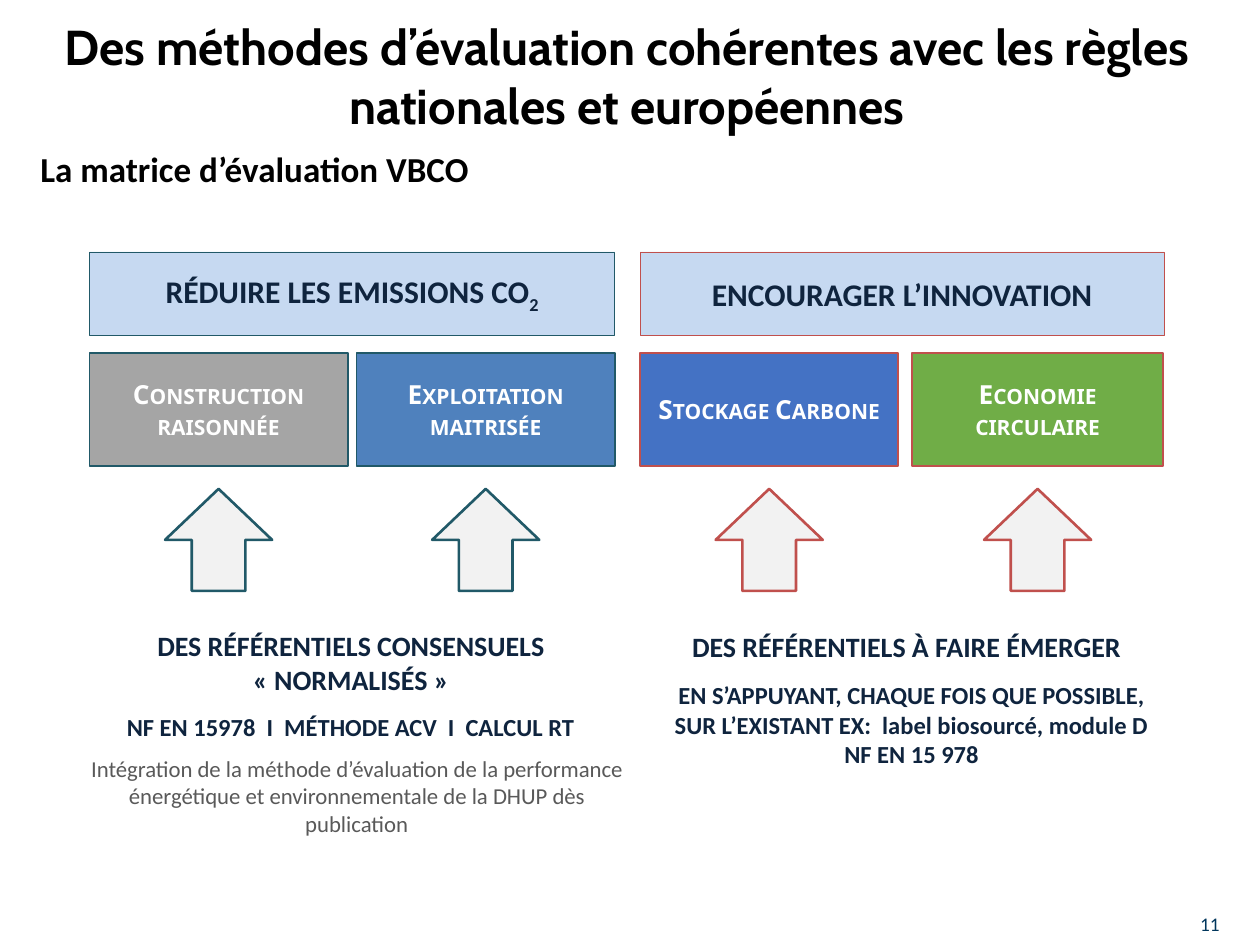
import pptx
import pptx.util
from pptx.dml.color import RGBColor
from pptx.enum.shapes import MSO_SHAPE
from pptx.enum.text import MSO_ANCHOR, PP_ALIGN

W, H = 10, 7.5
BLACK = RGBColor(0x00, 0x00, 0x00)
WHITE = RGBColor(0xFF, 0xFF, 0xFF)
NAVY = RGBColor(0x0F, 0x24, 0x3E)
PAGE_BLUE = RGBColor(0x00, 0x36, 0x5C)
GREY_TEXT = RGBColor(0x59, 0x59, 0x59)
PALE_BLUE = RGBColor(0xC6, 0xD9, 0xF1)
PALE_GREY = RGBColor(0xF2, 0xF2, 0xF2)
TEAL = RGBColor(0x21, 0x59, 0x68)
RED = RGBColor(0xC0, 0x50, 0x4D)
GREY = RGBColor(0xA5, 0xA5, 0xA5)
BLUE = RGBColor(0x4F, 0x81, 0xBD)
ROYAL = RGBColor(0x44, 0x72, 0xC4)
GREEN = RGBColor(0x70, 0xAD, 0x47)

PADDED = (0.13, 0.07, 0.13, 0.07)
HEADING = (0, 0, 0.04, 0)
FLUSH = (0, 0, 0, 0)

# Rows of the matrix: top, height
BANNER_ROW = (2, 0.66)
CARD_ROW = (2.8, 0.9)
ARROW_ROW = (3.88, 0.81)
ARROW_W = 0.85

# Banner: left, width, line colour, runs, then its cards (left, width, fill, text)
PILLARS = [
    (0.71, 4.17, TEAL, [("RÉDUIRE LES EMISSIONS CO", {}), ("2", {"baseline": "-25000"})],
     [(0.71, 2.05, GREY, "Construction raisonnée"),
      (2.83, 2.05, BLUE, "Exploitation maitrisée")]),
    (5.08, 4.16, RED, [("ENCOURAGER L’INNOVATION", {})],
     [(5.08, 2.05, ROYAL, "Stockage Carbone"),
      (7.24, 1.99, GREEN, "Economie circulaire")]),
]


def box(left, top, width, height):
    return [pptx.util.Inches(v) for v in (left, top, width, height)]


def write(sp, paragraphs, size, color, font="Calibri", bold=True,
          align=PP_ALIGN.CENTER, ins=PADDED, anchor=MSO_ANCHOR.TOP, wrap=True):
    """Fill a shape with paragraphs, each a list of (text, run attributes)."""
    tf = sp.text_frame
    tf.word_wrap = wrap
    tf.vertical_anchor = anchor
    tf.margin_left, tf.margin_top, tf.margin_right, tf.margin_bottom = box(*ins)
    for i, runs in enumerate(paragraphs):
        p = tf.add_paragraph() if i else tf.paragraphs[0]
        p.alignment = align
        for text, attributes in runs:
            r = p.add_run()
            r.text = text
            r.font.name, r.font.size, r.font.bold = font, pptx.util.Pt(size), bold
            r.font.color.rgb = color
            for key, value in attributes.items():
                r.font._element.set(key, value)


def add_text(s, place, lines, size, color, **style):
    sp = s.shapes.add_textbox(*box(*place))
    write(sp, [[(line, {})] for line in lines], size, color, **style)


def add_block(s, kind, place, fill, line, weight):
    sp = s.shapes.add_shape(kind, *box(*place))
    sp.shadow.inherit = False
    sp.fill.solid()
    sp.fill.fore_color.rgb = fill
    sp.line.color.rgb = line
    sp.line.width = pptx.util.Pt(weight)
    return sp


def add_card(s, left, width, fill, line, text):
    """A card with the arrow centred below it."""
    top, height = CARD_ROW
    sp = add_block(s, MSO_SHAPE.RECTANGLE, (left, top, width, height), fill, line, 1)
    write(sp, [[(text, {"cap": "small"})]], 15, WHITE, font="Noto Sans",
          anchor=MSO_ANCHOR.MIDDLE)
    top, height = ARROW_ROW
    arrow_left = left + (width - ARROW_W) / 2
    add_block(s, MSO_SHAPE.UP_ARROW, (arrow_left, top, ARROW_W, height),
              PALE_GREY, line, 1.5)


def add_pillar(s, left, width, line, runs, cards):
    top, height = BANNER_ROW
    sp = add_block(s, MSO_SHAPE.RECTANGLE, (left, top, width, height),
                   PALE_BLUE, line, 0.5)
    write(sp, [runs], 18, NAVY, anchor=MSO_ANCHOR.MIDDLE)
    for card_left, card_width, fill, text in cards:
        add_card(s, card_left, card_width, fill, line, text)


def main():
    prs = pptx.Presentation()
    prs.slide_width, prs.slide_height = pptx.util.Inches(W), pptx.util.Inches(H)
    s = prs.slides.add_slide(prs.slide_layouts[6])

    # Headings
    add_text(s, (0.31, 0.13, 9.37, 0.73),
             ["Des méthodes d’évaluation cohérentes avec les règles nationales et européennes"],
             28, BLACK, font="Cabin", ins=HEADING)
    add_text(s, (0.32, 1.17, 9.36, 0.5), ["La matrice d’évaluation VBCO"],
             20, BLACK, align=PP_ALIGN.LEFT, ins=HEADING)

    # Matrix
    for pillar in PILLARS:
        add_pillar(s, *pillar)

    # Reference frameworks, left
    add_text(s, (0.74, 4.92, 4.09, 0.94),
             ["DES RÉFÉRENTIELS CONSENSUELS", "« NORMALISÉS »"], 16, NAVY)
    add_text(s, (0.86, 5.58, 3.85, 0.37),
             ["NF EN 15978  I  MÉTHODE ACV  I  CALCUL RT"], 14, NAVY, wrap=False)
    add_text(s, (0.52, 5.92, 4.62, 0.81),
             ["Intégration de la méthode d’évaluation de la performance énergétique "
              "et environnementale de la DHUP dès publication"],
             13, GREY_TEXT, bold=False)

    # Reference frameworks, right
    add_text(s, (5.11, 4.93, 4.17, 0.4), ["DES RÉFÉRENTIELS À FAIRE ÉMERGER"], 16, NAVY)
    add_text(s, (5.11, 5.33, 4.25, 0.84),
             ["EN S’APPUYANT, CHAQUE FOIS QUE POSSIBLE,",
              "SUR L’EXISTANT EX:  label biosourcé, module D NF EN 15 978"], 14, NAVY)

    # Page number
    add_text(s, (9.41, 7.24, 0.27, 0.19), ["11"], 11, PAGE_BLUE, bold=False,
             align=PP_ALIGN.RIGHT, ins=FLUSH, wrap=False)

    prs.save("out.pptx")


if __name__ == "__main__":
    main()
